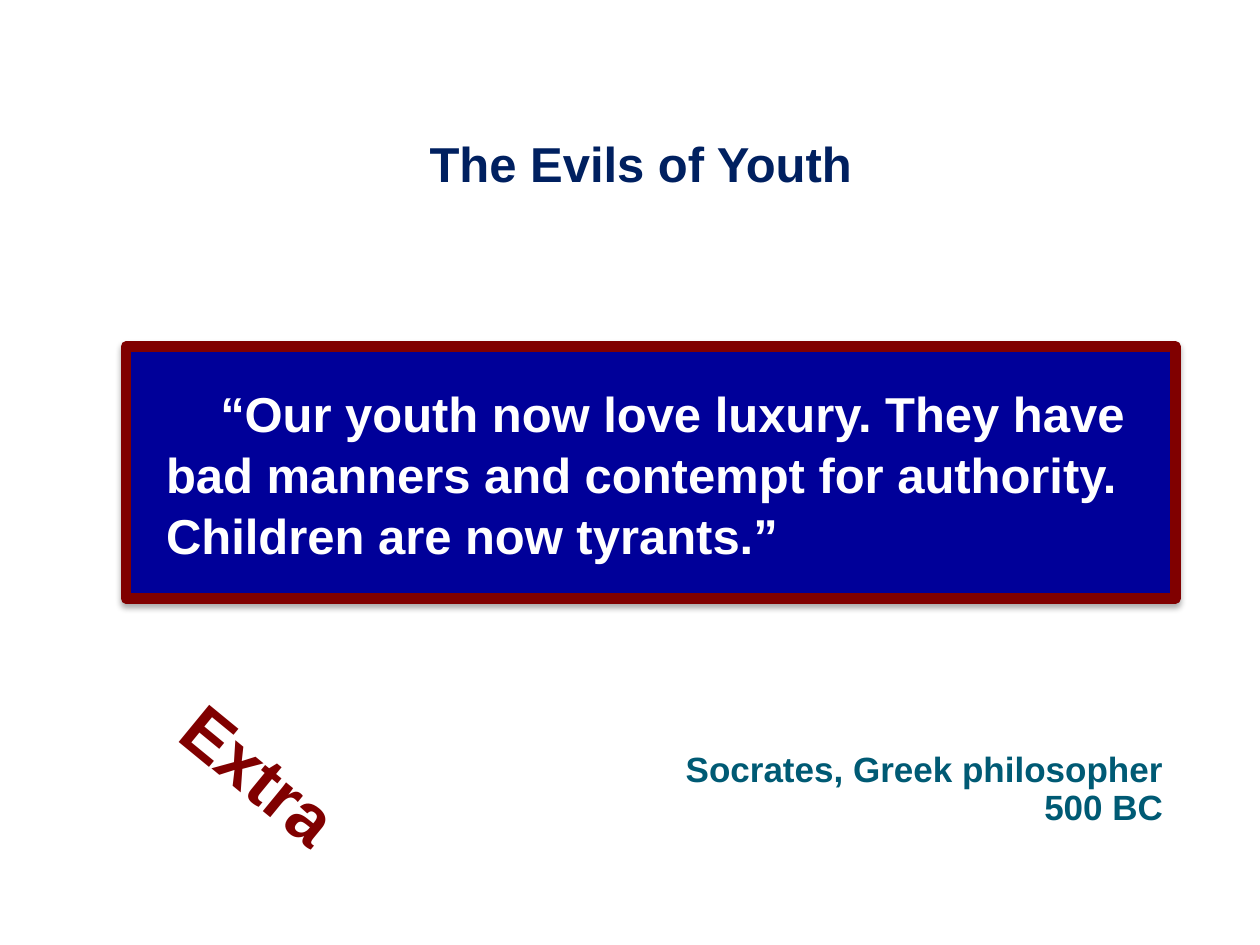
from lxml import etree
from pptx import Presentation
from pptx.dml.color import RGBColor
from pptx.enum.shapes import MSO_SHAPE
from pptx.enum.text import MSO_ANCHOR, PP_ALIGN
from pptx.oxml.ns import qn
from pptx.util import Inches, Pt

RECTANGLE = MSO_SHAPE.RECTANGLE
TOP, MIDDLE = MSO_ANCHOR.TOP, MSO_ANCHOR.MIDDLE
LEFT, CENTER, RIGHT = PP_ALIGN.LEFT, PP_ALIGN.CENTER, PP_ALIGN.RIGHT
JUSTIFY = PP_ALIGN.JUSTIFY

WHITE = RGBColor(0xFF, 0xFF, 0xFF)
NAVY = RGBColor(0x00, 0x20, 0x60)
BLUE = RGBColor(0x00, 0x00, 0x99)
MAROON = RGBColor(0x80, 0x00, 0x00)
TEAL = RGBColor(0x00, 0x5A, 0x74)

TITLE = ["The Evils of Youth"]
QUOTE = [
    "“Our youth now love luxury. They have",
    "bad manners and contempt for authority.",
    "Children are now tyrants.”",
]
SOURCE = ["Socrates, Greek philosopher\v500 BC"]
LABEL = ["Extra"]

WIDTH, HEIGHT = 10, 7.5
QUOTE_MARGIN, QUOTE_INDENT = 0.22, 0.43


def write(shape, lines, size, color, align=LEFT, anchor=TOP, spacing=1.0, wrap=True):
    frame = shape.text_frame
    frame.word_wrap = wrap
    frame.vertical_anchor = anchor
    for number, line in enumerate(lines):
        para = frame.paragraphs[0] if number == 0 else frame.add_paragraph()
        para.text = line
        para.alignment = align
        para.line_spacing = spacing
        for span in para.runs:
            span.font.name = "Arial"
            span.font.size = Pt(size)
            span.font.bold = True
            span.font.color.rgb = color


def add_box(slide, place, fill):
    box = slide.shapes.add_shape(RECTANGLE, *map(Inches, place))
    box.shadow.inherit = False
    box.fill.solid()
    box.fill.fore_color.rgb = fill
    box.line.fill.background()
    return box


def add_text(slide, place):
    return slide.shapes.add_textbox(*map(Inches, place))


def drop_shadow(shape, blur, distance, opacity):
    """Cast a black shadow straight down; blur and distance in points."""
    effects = shape._element.spPr.find(qn("a:effectLst"))
    shadow = etree.SubElement(
        effects, qn("a:outerShdw"), blurRad=str(Pt(blur)), dist=str(Pt(distance)),
        dir="5400000", rotWithShape="0")
    color = etree.SubElement(shadow, qn("a:srgbClr"), val="000000")
    etree.SubElement(color, qn("a:alpha"), val=str(opacity * 1000))


def indent_quote(shape):
    for number, para in enumerate(shape.text_frame.paragraphs):
        properties = para._p.get_or_add_pPr()
        properties.set("marL", str(Inches(QUOTE_MARGIN)))
        properties.set("indent", str(Inches(QUOTE_INDENT if number == 0 else 0)))


def main():
    deck = Presentation()
    deck.slide_width, deck.slide_height = Inches(WIDTH), Inches(HEIGHT)
    slide = deck.slides.add_slide(deck.slide_layouts[6])

    title = add_text(slide, (0.59, 0.91, 8.99, 0.76))
    write(title, TITLE, 28, NAVY, align=CENTER, anchor=MIDDLE)

    source = add_box(slide, (4.58, 5.92, 4.75, 0.64), WHITE)
    write(source, SOURCE, 20, TEAL, align=RIGHT, spacing=0.9)

    quote = add_box(slide, (1, 2.75, 8.33, 2), BLUE)
    quote.line.color.rgb = MAROON
    quote.line.width = Pt(6)
    drop_shadow(quote, blur=3.5, distance=2.2, opacity=32)
    write(quote, QUOTE, 28, WHITE, align=JUSTIFY, anchor=MIDDLE, spacing=1.04)
    indent_quote(quote)

    label = add_text(slide, (1.25, 5.75, 1.61, 0.85))
    label.rotation = 39.4
    write(label, LABEL, 40, MAROON, wrap=False)

    deck.save("out.pptx")


if __name__ == "__main__":
    main()
